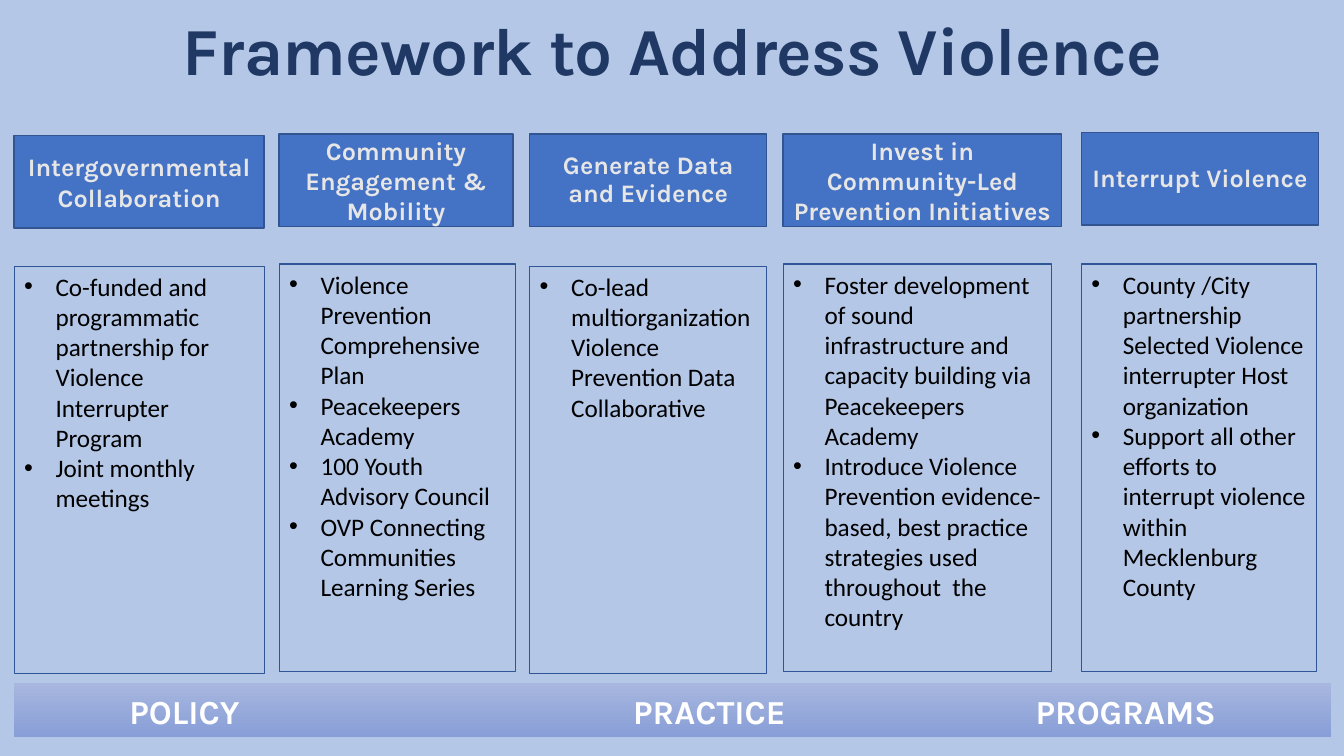
import pptx
import pptx.util
import pptx.dml.color
import pptx.enum.shapes
import pptx.enum.text
import pptx.oxml.ns
import lxml.etree

Pt = pptx.util.Pt
RGBColor = pptx.dml.color.RGBColor
PP_ALIGN = pptx.enum.text.PP_ALIGN
MSO_ANCHOR = pptx.enum.text.MSO_ANCHOR

BACKGROUND = RGBColor(0xB4, 0xC7, 0xE7)
NAVY = RGBColor(0x20, 0x38, 0x64)
HEADER_FILL = RGBColor(0x44, 0x72, 0xC4)
HEADER_LINE = RGBColor(0x32, 0x54, 0x91)
HEADER_TEXT = RGBColor(0xE7, 0xE6, 0xE6)
LIST_LINE = RGBColor(0x2F, 0x55, 0x97)
BAR_TOP = RGBColor(0xA8, 0xB7, 0xDF)
BAR_BOTTOM = RGBColor(0x88, 0x9E, 0xD7)
BLACK = RGBColor(0x00, 0x00, 0x00)
WHITE = RGBColor(0xFF, 0xFF, 0xFF)

HEADER_HEIGHT = 66
LIST_HEIGHT = 290.9
BULLET_INDENT = 22.5

COLUMNS = [
    (10.1, 178.6, 178.6, 97, 190.1, 1, "Intergovernmental Collaboration", [
        "Co-funded and programmatic partnership for Violence Interrupter Program",
        "Joint monthly meetings"]),
    (199.4, 167, 169.2, 95.8, 188.6, 1, "Community Engagement & Mobility", [
        "Violence Prevention Comprehensive Plan",
        "Peacekeepers Academy",
        "100 Youth Advisory Council",
        "OVP Connecting Communities Learning Series"]),
    (378.4, 169.2, 169.2, 95.8, 190.1, 0.9, "Generate Data and Evidence", [
        "Co-lead multiorganization Violence Prevention Data Collaborative"]),
    (559.4, 199, 191.5, 95.8, 188.6, 1,
     "Invest in Community-Led Prevention Initiatives", [
        "Foster development of sound infrastructure and capacity building via "
        "Peacekeepers Academy",
        "Introduce Violence Prevention evidence-based, best practice strategies "
        "used throughout  the country"]),
    (772.5, 169.4, 168, 94.8, 188.6, 0.9, "Interrupt Violence", [
        "County /City partnership Selected Violence interrupter Host organization",
        "Support all other efforts to interrupt violence within Mecklenburg County"]),
]


def set_font(paragraph, name, size, color, bold=False):
    font = paragraph.font
    font.name = name
    font.size = Pt(size)
    font.bold = bold
    font.color.rgb = color


def add_rectangle(slide, left, top, width, height):
    shape = slide.shapes.add_shape(
        pptx.enum.shapes.MSO_SHAPE.RECTANGLE,
        Pt(left), Pt(top), Pt(width), Pt(height))
    shape.shadow.inherit = False
    shape.text_frame.word_wrap = True
    return shape


def set_title(slide, left, top, width, height):
    title = slide.shapes.title
    title.left, title.top = Pt(left), Pt(top)
    title.width, title.height = Pt(width), Pt(height)
    frame = title.text_frame
    frame.auto_size = pptx.enum.text.MSO_AUTO_SIZE.NONE
    frame.vertical_anchor = MSO_ANCHOR.TOP
    paragraph = frame.paragraphs[0]
    paragraph.text = "Framework to Address Violence"
    paragraph.alignment = PP_ALIGN.CENTER
    paragraph.line_spacing = 0.85
    set_font(paragraph, "Karla", 48, NAVY, True)
    paragraph.runs[0].font._element.set("spc", "-50")


def add_header(slide, left, top, width, height, text, line_spacing):
    shape = add_rectangle(slide, left, top, width, height)
    shape.fill.solid()
    shape.fill.fore_color.rgb = HEADER_FILL
    shape.line.color.rgb = HEADER_LINE
    shape.line.width = Pt(1)
    shape.text_frame.vertical_anchor = MSO_ANCHOR.MIDDLE
    paragraph = shape.text_frame.paragraphs[0]
    paragraph.text = text
    paragraph.alignment = PP_ALIGN.CENTER
    paragraph.line_spacing = line_spacing
    set_font(paragraph, "Karla", 18, HEADER_TEXT, True)


def add_list(slide, left, top, width, height, items):
    shape = add_rectangle(slide, left, top, width, height)
    shape.fill.background()
    shape.line.color.rgb = LIST_LINE
    shape.line.width = Pt(0.75)
    frame = shape.text_frame
    frame.vertical_anchor = MSO_ANCHOR.TOP
    for index, item in enumerate(items):
        paragraph = frame.add_paragraph() if index else frame.paragraphs[0]
        paragraph.text = item
        paragraph.alignment = PP_ALIGN.LEFT
        properties = paragraph._p.get_or_add_pPr()
        properties.set("marL", str(Pt(BULLET_INDENT)))
        properties.set("indent", str(-Pt(BULLET_INDENT)))
        qn = pptx.oxml.ns.qn
        lxml.etree.SubElement(properties, qn("a:buFont"), typeface="Arial")
        lxml.etree.SubElement(properties, qn("a:buChar"), char="•")
        set_font(paragraph, "Calibri", 18, BLACK)


def add_bar(slide, left, top, width, height):
    shape = add_rectangle(slide, left, top, width, height)
    shape.fill.gradient()
    shape.fill.gradient_angle = 270
    for stop, color in zip(shape.fill.gradient_stops, (BAR_TOP, BAR_BOTTOM)):
        stop.color.rgb = color
    shape.line.fill.background()
    shape.text_frame.vertical_anchor = MSO_ANCHOR.MIDDLE
    paragraph = shape.text_frame.paragraphs[0]
    paragraph.text = "\tPOLICY\tPRACTICE\tPROGRAMS"
    paragraph.alignment = PP_ALIGN.LEFT
    paragraph.line_spacing = 1.07
    paragraph.space_after = Pt(8)
    qn = pptx.oxml.ns.qn
    tabs = lxml.etree.SubElement(paragraph._p.get_or_add_pPr(), qn("a:tabLst"))
    for position in (114.6, 489.6, 787):
        lxml.etree.SubElement(tabs, qn("a:tab"), pos=str(Pt(position)), algn="ctr")
    set_font(paragraph, "Karla", 24, WHITE, True)


def build_slide(presentation):
    slide = presentation.slides.add_slide(presentation.slide_layouts[5])
    slide.background.fill.solid()
    slide.background.fill.fore_color.rgb = BACKGROUND
    add_bar(slide, 10.1, 487.6, 941, 38.9)
    set_title(slide, 19.4, 10.8, 921.6, 80)
    for (left, header_width, list_width, header_top, list_top,
         line_spacing, heading, items) in COLUMNS:
        add_header(slide, left, header_top, header_width, HEADER_HEIGHT,
                   heading, line_spacing)
        add_list(slide, left, list_top, list_width, LIST_HEIGHT, items)


def main():
    presentation = pptx.Presentation()
    presentation.slide_width = Pt(960)
    presentation.slide_height = Pt(540)
    build_slide(presentation)
    presentation.save("out.pptx")


if __name__ == "__main__":
    main()
